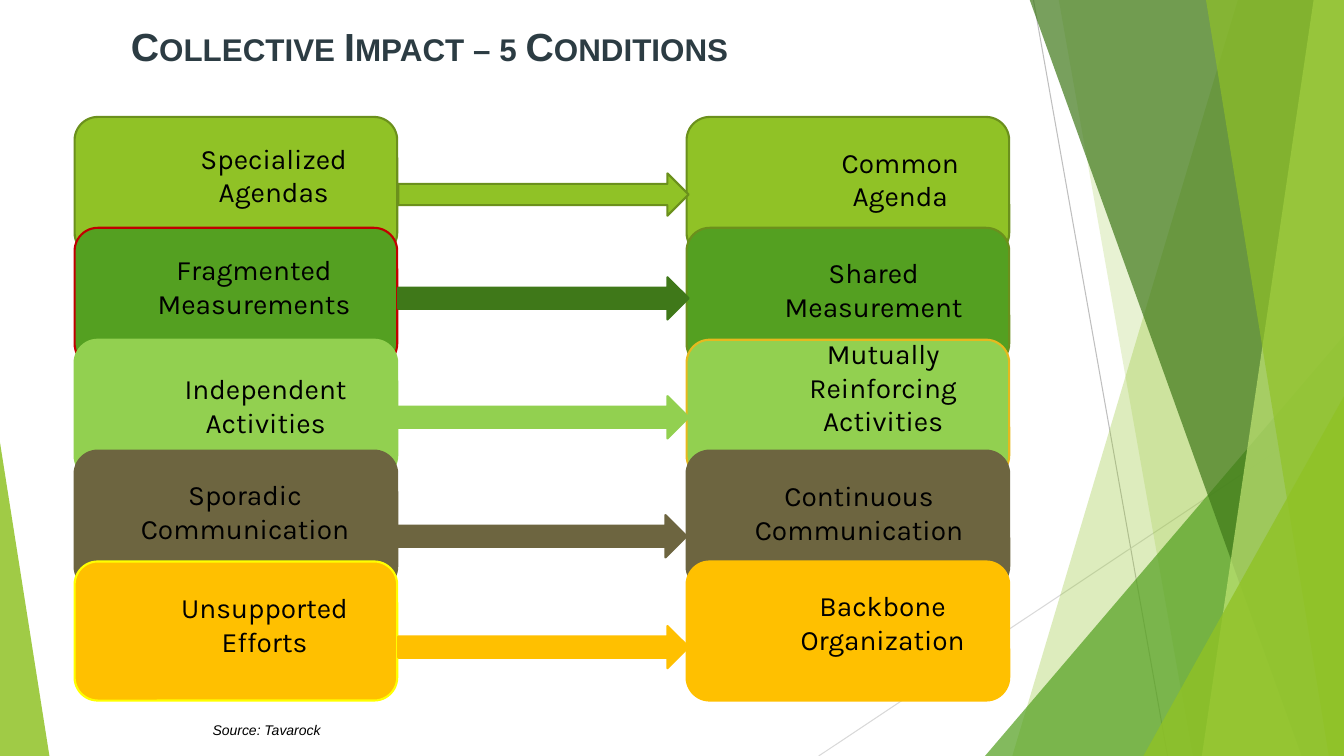
from lxml.etree import SubElement
from pptx import Presentation
from pptx.dml.color import RGBColor
from pptx.enum.shapes import MSO_CONNECTOR as Connector, MSO_SHAPE as Shape
from pptx.enum.text import MSO_ANCHOR as Anchor, PP_ALIGN as Align
from pptx.oxml.ns import qn
from pptx.util import Pt

PX = 9144
WIDTH, HEIGHT = 1333, 750
ROW_PITCH, CARD_HEIGHT = 110.3, 138

LIME = RGBColor(0x90, 0xC2, 0x26)
OLIVE = RGBColor(0x6B, 0x90, 0x1C)
GREEN = RGBColor(0x54, 0xA0, 0x21)
FOREST = RGBColor(0x3F, 0x78, 0x19)
PALE_LIME = RGBColor(0xC0, 0xE4, 0x74)
LIGHT_GREEN = RGBColor(0x92, 0xD0, 0x50)
BROWN = RGBColor(0x6D, 0x65, 0x40)
AMBER = RGBColor(0xFF, 0xC0, 0x00)
YELLOW = RGBColor(0xFF, 0xFF, 0x00)
GOLD = RGBColor(0xE6, 0xB9, 0x1E)
RED = RGBColor(0xC0, 0x00, 0x00)
SLATE = RGBColor(0x2C, 0x3C, 0x43)
BLACK = RGBColor(0x00, 0x00, 0x00)
GREY = RGBColor(0xBF, 0xBF, 0xBF)
LIGHT_GREY = RGBColor(0xD9, 0xD9, 0xD9)

CARD_FILLS = [LIME, GREEN, LIGHT_GREEN, BROWN, AMBER]
PROBLEM_LINES = [OLIVE, RED, LIGHT_GREEN, BROWN, YELLOW]
CONDITION_LINES = [OLIVE, OLIVE, GOLD, BROWN, AMBER]
ARROW_FILLS = [LIME, FOREST, LIGHT_GREEN, BROWN, AMBER]
ARROW_LINES = [OLIVE, FOREST, LIGHT_GREEN, BROWN, AMBER]

PROBLEMS = [
    ("Specialized\nAgendas", 88, 19, 219),
    ("Fragmented\nMeasurements", 43, 20, 270),
    ("Independent\nActivities", 69, 27, 241),
    ("Sporadic\nCommunication", 23, 22, 292),
    ("Unsupported\nEfforts", 67, 24, 243),
]
CONDITIONS = [
    ("Common\nAgenda", 119, 23, 186),
    ("Shared\nMeasurement", 58, 23, 255),
    ("Mutually\nReinforcing\nActivities", 80, -8, 230),
    ("Continuous\nCommunication", 25, 23, 292),
    ("Backbone\nOrganization", 73, 22, 243),
]
ARROWS = [(56, 288), (49, 288), (56, 288), (64, 286), (64, 288)]


def emu(*lengths):
    """Turn px lengths into EMU."""
    return [length * PX for length in lengths]


def paint(shape, fill, line=None, opacity=100):
    """Set the fill, outline and opacity of a shape and drop its shadow."""
    shape.shadow.inherit = False
    shape.fill.solid()
    shape.fill.fore_color.rgb = fill
    if opacity < 100:
        color = shape._element.spPr.find(qn("a:solidFill"))[0]
        SubElement(color, qn("a:alpha")).set("val", str(opacity * 1000))
    if line is None:
        shape.line.fill.background()
    else:
        shape.line.color.rgb = line
        shape.line.width = Pt(1.5)


def add_text(page, box, text, size, font, color, align=Align.LEFT):
    """Add a wrapped text box and return its text frame."""
    frame = page.shapes.add_textbox(*emu(*box)).text_frame
    frame.word_wrap = True
    frame.vertical_anchor = Anchor.TOP
    frame.text = text
    for para in frame.paragraphs:
        para.alignment = align
        for span in para.runs:
            span.font.size = Pt(size)
            span.font.name = font
            span.font.color.rgb = color
    return frame


def add_thin_line(page, start, end, color):
    """Add a hairline between two points."""
    line = page.shapes.add_connector(Connector.STRAIGHT, *emu(*start, *end))
    line.line.color.rgb = color
    line.line.width = Pt(0.75)
    SubElement(line._element.spPr, qn("a:effectLst"))


def add_triangle(page, box, apex, fill, opacity):
    """Add a right-angled triangle with its apex at the given fraction."""
    triangle = page.shapes.add_shape(Shape.ISOSCELES_TRIANGLE, *emu(*box))
    triangle.adjustments[0] = apex
    paint(triangle, fill, opacity=opacity)


def add_facet(page, box, top_x, bottom_x, fill, opacity):
    """Add a slanted panel that runs to the right edge of the box."""
    left, top, width, height = box
    right, bottom = left + width, top + height
    builder = page.shapes.build_freeform(left + top_x, top - 1, scale=PX)
    builder.add_line_segments(
        [(right, top - 1), (right, bottom), (left + bottom_x, bottom)], close=True)
    paint(builder.convert_to_shape(), fill, opacity=opacity)


def add_backdrop(page, box):
    """Draw the layered green facets on the right."""
    left, top, width, height = box
    right, bottom = left + width, top + height
    add_thin_line(page, (left + 48, top), (left + 181, bottom), GREY)
    add_thin_line(page, (right, top + 403), (left - 165, bottom), LIGHT_GREY)
    add_facet(page, box, 251, 27, LIME, 30)
    add_facet(page, box, 73, 206, LIME, 20)
    add_triangle(page, (left, bottom - 417, width, 417), 1, GREEN, 72)
    add_facet(page, box, 44, 314, FOREST, 70)
    add_facet(page, box, 326, 215, PALE_LIME, 70)
    add_facet(page, box, 219, 341, LIME, 65)
    add_triangle(page, (right - 199, bottom - 357, 199, 357), 1, LIME, 80)


def add_title(page, box):
    """Write the heading in bold small capitals."""
    frame = add_text(page, box, "Collective Impact – 5 Conditions", 28, "Arial", SLATE)
    span = frame.paragraphs[0].runs[0]
    span.font.bold = True
    span._r.get_or_add_rPr().set("cap", "small")


def row_top(top, row):
    """Return the top of a card row."""
    return top + round(ROW_PITCH * row)


def add_column(page, box, labels, lines):
    """Stack five overlapping cards and place their labels."""
    left, top, width, _ = box
    for row, (fill, line) in enumerate(zip(CARD_FILLS, lines)):
        card_box = emu(left, row_top(top, row), width, CARD_HEIGHT)
        paint(page.shapes.add_shape(Shape.ROUNDED_RECTANGLE, *card_box), fill, line)
    for row, (text, dx, dy, label_width) in enumerate(labels):
        label_height = 77 if text.count("\n") == 1 else 111
        label_box = (left + dx, row_top(top, row) + dy, label_width, label_height)
        add_text(page, label_box, text, 20, "Karla", BLACK, Align.CENTER)


def add_arrows(page, box):
    """Link each card on the left to its partner on the right."""
    left, top, _, _ = box
    for row, (dy, length) in enumerate(ARROWS):
        arrow_box = emu(left, row_top(top, row) + dy, length, 42)
        arrow = page.shapes.add_shape(Shape.RIGHT_ARROW, *arrow_box)
        paint(arrow, ARROW_FILLS[row], ARROW_LINES[row])


def add_source(page, box):
    """Write the source line in italics."""
    frame = add_text(page, box, "Source: Tavarock", 10, "Arial", BLACK)
    frame.paragraphs[0].runs[0].font.italic = True


def main():
    """Build the slide and save it."""
    deck = Presentation()
    deck.slide_width, deck.slide_height = emu(WIDTH, HEIGHT)
    page = deck.slides.add_slide(deck.slide_layouts[6])
    add_backdrop(page, (977, 0, 356, HEIGHT))
    add_triangle(page, (0, 439, 49, 311), 0, LIME, 85)
    add_title(page, (120, 17, 888, 57))
    add_column(page, (74, 116, 320, 579), PROBLEMS, PROBLEM_LINES)
    add_column(page, (681, 116, 320, 579), CONDITIONS, CONDITION_LINES)
    add_arrows(page, (395, 116, 288, 579))
    add_source(page, (201, 711, 286, 29))
    deck.save("out.pptx")


if __name__ == "__main__":
    main()
